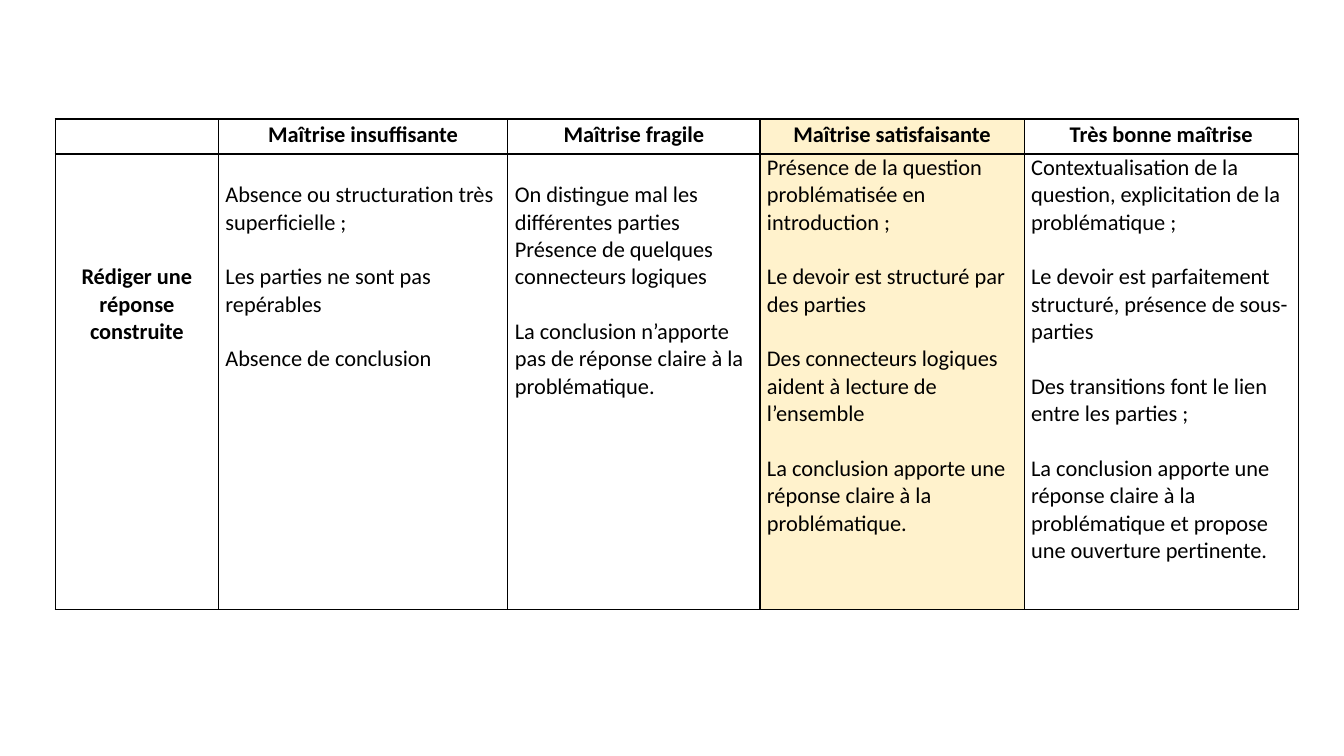
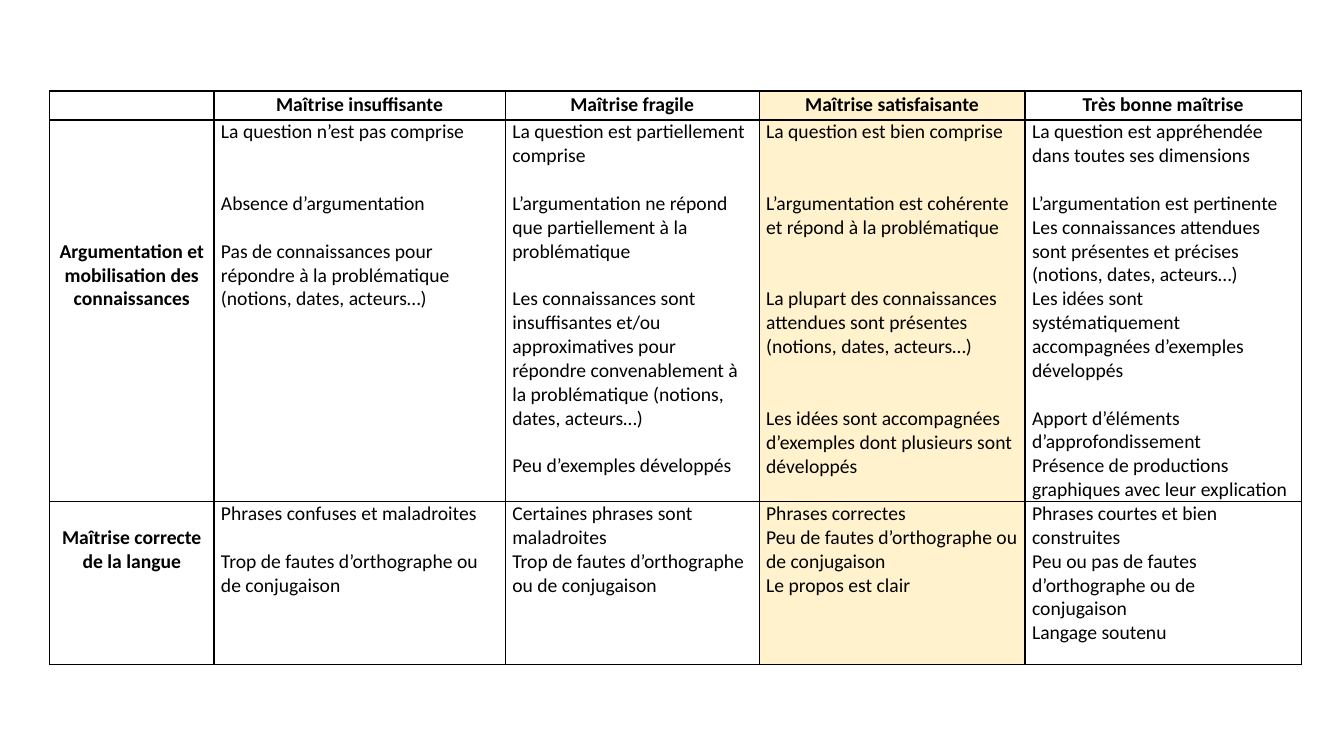
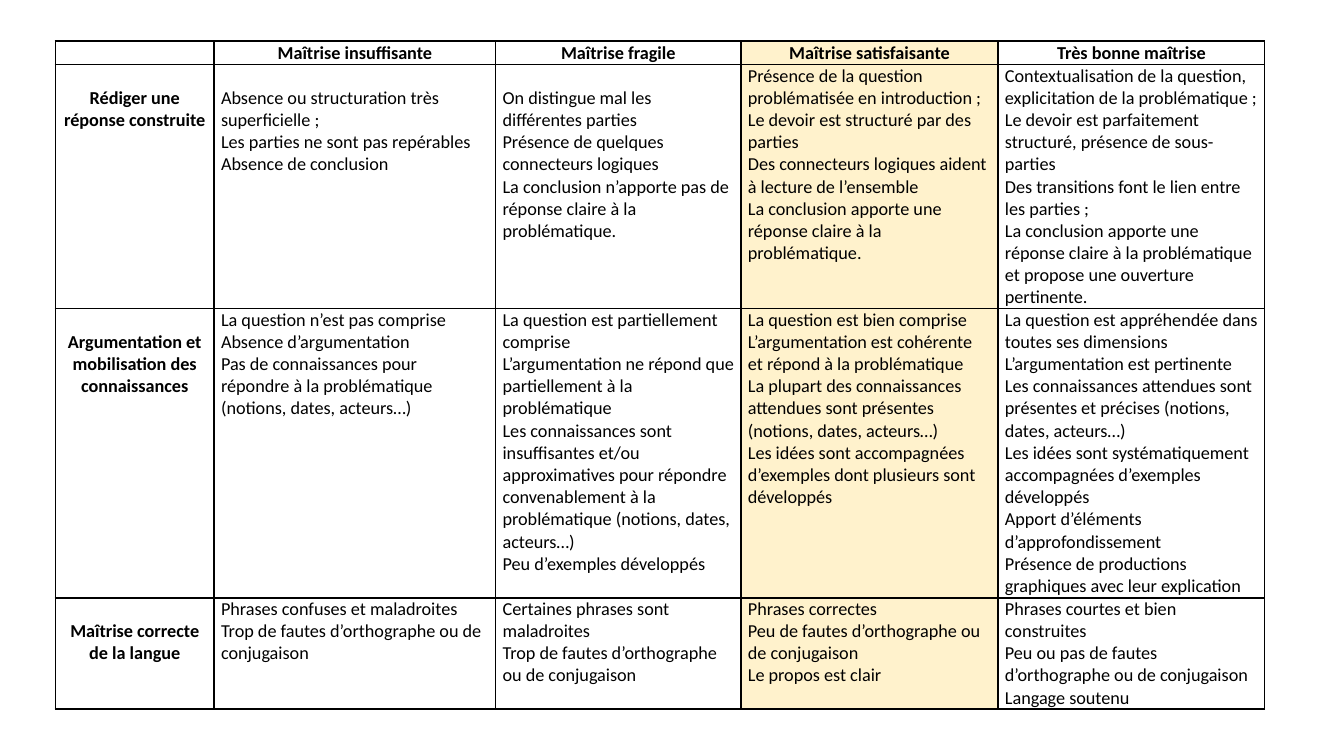
from dataclasses import dataclass

from lxml.etree import SubElement
from pptx import Presentation
from pptx.dml.color import RGBColor
from pptx.enum.text import MSO_ANCHOR, PP_ALIGN
from pptx.oxml.ns import qn
from pptx.util import Pt


@dataclass(frozen=True)
class Theme:
    """Colours, font, type sizes and table measures of the deck."""
    ink: str = "000000"
    paper: str = "FFFFFF"
    cream: str = "FFF2CC"
    font: str = "Calibri"
    large: int = 16
    medium: int = 14
    small: int = 13
    line: float = 1.22
    lead: float = 1.07
    inset: int = 5
    border: int = 1
    target: int = 3
    shares: tuple = (13.13, 23.28, 20.28, 21.25, 22.06)


HEADS = ["", "Maîtrise insuffisante", "Maîtrise fragile",
         "Maîtrise satisfaisante", "Très bonne maîtrise"]

SKILLS = {
    "plan": [
        ["Rédiger une réponse construite"],
        ["Absence ou structuration très superficielle ;",
         "Les parties ne sont pas repérables",
         "Absence de conclusion"],
        ["On distingue mal les différentes parties",
         "Présence de quelques connecteurs logiques",
         "La conclusion n’apporte pas de réponse claire à la problématique."],
        ["Présence de la question problématisée en introduction ;",
         "Le devoir est structuré par des parties",
         "Des connecteurs logiques aident à lecture de l’ensemble",
         "La conclusion apporte une réponse claire à la problématique."],
        ["Contextualisation de la question, explicitation de la problématique ;",
         "Le devoir est parfaitement structuré, présence de sous-parties",
         "Des transitions font le lien entre les parties ;",
         "La conclusion apporte une réponse claire à la problématique et propose "
         "une ouverture pertinente."],
    ],
    "proof": [
        ["Argumentation et mobilisation des connaissances"],
        ["La question n’est pas comprise",
         "Absence d’argumentation",
         "Pas de connaissances pour répondre à la problématique "
         "(notions, dates, acteurs…)"],
        ["La question est partiellement comprise",
         "L’argumentation ne répond que partiellement à la problématique",
         "Les connaissances sont insuffisantes et/ou approximatives pour répondre "
         "convenablement à la problématique (notions, dates, acteurs…)",
         "Peu d’exemples développés"],
        ["La question est bien comprise",
         "L’argumentation est cohérente et répond à la problématique",
         "La plupart des connaissances attendues sont présentes "
         "(notions, dates, acteurs…)",
         "Les idées sont accompagnées d’exemples dont plusieurs sont développés"],
        ["La question est appréhendée dans toutes ses dimensions",
         "L’argumentation est pertinente",
         "Les connaissances attendues sont présentes et précises "
         "(notions, dates, acteurs…)",
         "Les idées sont systématiquement accompagnées d’exemples développés",
         "Apport d’éléments d’approfondissement",
         "Présence de productions graphiques avec leur explication"],
    ],
    "style": [
        ["Maîtrise correcte de la langue"],
        ["Phrases confuses et maladroites",
         "Trop de fautes d’orthographe ou de conjugaison"],
        ["Certaines phrases sont maladroites",
         "Trop de fautes d’orthographe ou de conjugaison"],
        ["Phrases correctes",
         "Peu de fautes d’orthographe ou de conjugaison",
         "Le propos est clair"],
        ["Phrases courtes et bien construites",
         "Peu ou pas de fautes d’orthographe ou de conjugaison",
         "Langage soutenu"],
    ],
}


def apply(item, values):
    """Set each named attribute of an item."""
    for name, value in values.items():
        setattr(item, name, value)


class Deck:
    """Builds slides that each hold one grid of skills."""

    def __init__(self, theme):
        """Start an empty wide deck."""
        self.theme = theme
        self.show = Presentation()
        apply(self.show, {"slide_width": Pt(960), "slide_height": Pt(540)})
        self.slide = None

    def add(self):
        """Add a blank slide and make it current."""
        self.slide = self.show.slides.add_slide(self.show.slide_layouts[6])

    def frame(self, cell, fill):
        """Draw the borders of a cell and fill it."""
        props = cell._tc.get_or_add_tcPr()
        for side in ("a:lnL", "a:lnR", "a:lnT", "a:lnB"):
            line = SubElement(props, qn(side), w=str(Pt(self.theme.border)))
            solid = SubElement(line, qn("a:solidFill"))
            SubElement(solid, qn("a:srgbClr"), val=self.theme.ink)
        cell.fill.solid()
        cell.fill.fore_color.rgb = RGBColor.from_string(fill)

    def label(self, cell, texts, gaps, size, bold, head):
        """Put paragraphs in a cell, each after its number of blank lines."""
        look = self.theme
        step = size * look.line
        apply(cell, {
            "margin_left": Pt(look.inset), "margin_right": Pt(look.inset),
            "margin_top": Pt(round(gaps[0] * step, 2)), "margin_bottom": 0,
            "vertical_anchor": MSO_ANCHOR.TOP})
        for i, (text, gap) in enumerate(zip(texts, gaps)):
            para = cell.text_frame.add_paragraph() if i else cell.text_frame.paragraphs[0]
            apply(para, {
                "alignment": PP_ALIGN.CENTER if bold else PP_ALIGN.LEFT,
                "line_spacing": look.lead if head else 1.0,
                "space_before": Pt(round(gap * step, 2) if i else 0)})
            if text:
                run = para.add_run()
                run.text = text
                apply(run.font, {"name": look.font, "size": Pt(size), "bold": bold})
                run.font.color.rgb = RGBColor.from_string(look.ink)
            else:
                SubElement(para._p, qn("a:endParaRPr"), sz=str(size * 100))

    def grid(self, left, top, width, size, tall, rows):
        """Add a grid with a head row and the given skill rows."""
        look = self.theme
        body = [(SKILLS[key], gaps.split()) for key, gaps in rows.items()]
        lines = [([[head] for head in HEADS], "00000")] + body
        shape = self.slide.shapes.add_table(
            len(lines), len(HEADS), Pt(left), Pt(top), Pt(width), Pt(sum(tall)))
        table = shape.table
        apply(table, {"horz_banding": False, "first_row": True})
        for column, share in zip(table.columns, look.shares):
            column.width = Pt(round(width * share / 100, 2))
        for r, (texts, gaps) in enumerate(lines):
            table.rows[r].height = Pt(tall[r])
            for c in range(len(HEADS)):
                cell = table.cell(r, c)
                self.frame(cell, look.cream if c == look.target else look.paper)
                self.label(cell, texts[c], [int(gap) for gap in gaps[c]],
                           size, r == 0 or c == 0, r == 0)


def main():
    """Build and save the deck."""
    theme = Theme()
    deck = Deck(theme)
    grids = [
        (39.5, 85, 888, theme.large, (25, 325.5),
         {"plan": "4 111 101 0111 0111"}),
        (35.5, 65, 894, theme.medium, (20.8, 271.5, 116.5),
         {"proof": "5 021 0111 0222 010010", "style": "1 01 00 000 000"}),
        (39.5, 29.3, 864, theme.small, (17, 143.3, 206.6, 63.4),
         {"plan": "1 100 100 0000 0000", "proof": "1 000 0000 0000 000000",
          "style": "1 00 00 000 000"}),
    ]
    for grid in grids:
        deck.add()
        deck.grid(*grid)
    deck.show.save("out.pptx")


if __name__ == "__main__":
    main()
